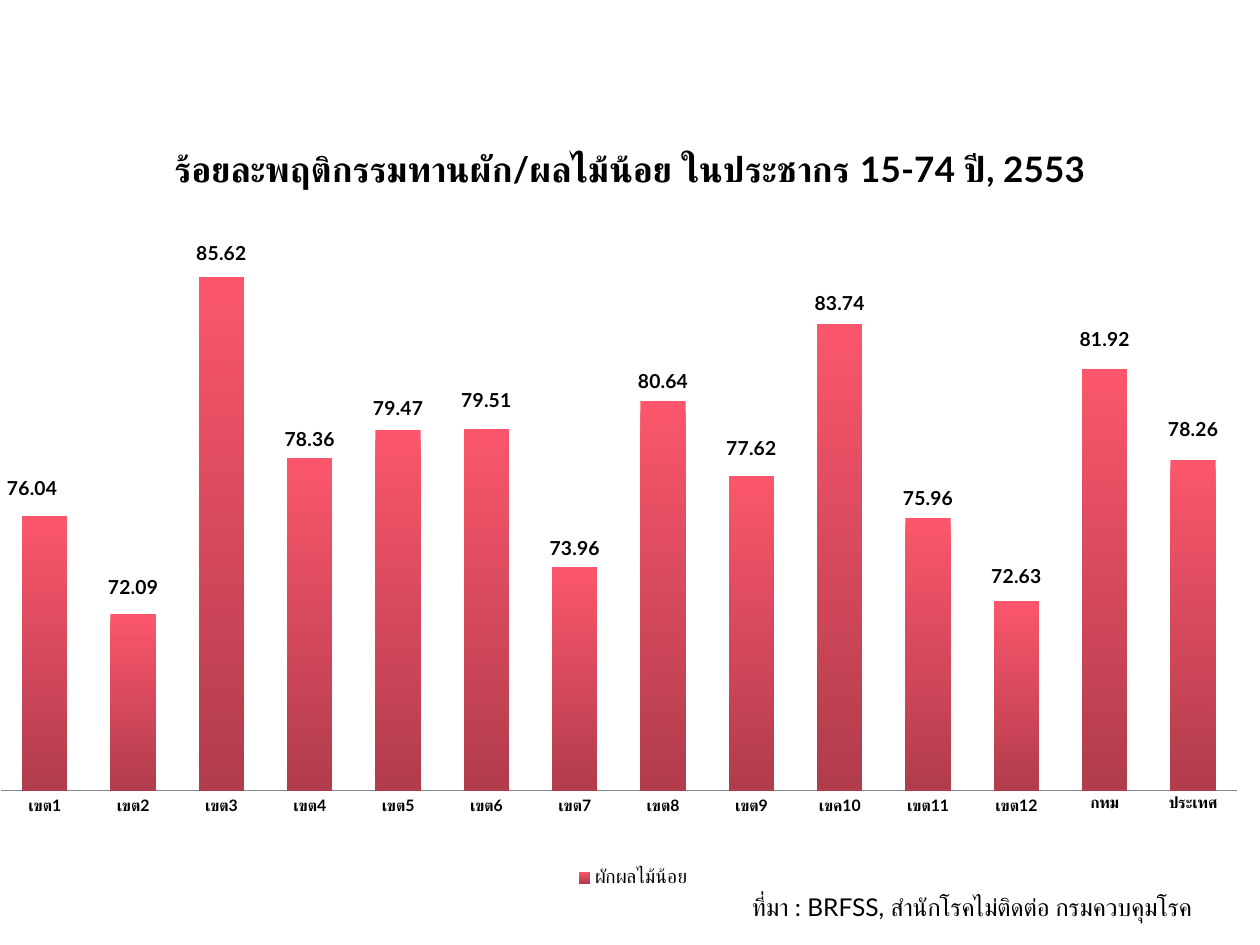
import pptx
import pptx.chart.data
import pptx.dml.color
import pptx.enum.chart
import pptx.enum.text
import pptx.oxml
import pptx.oxml.ns
import pptx.util

Inches = pptx.util.Inches
COLORS = {"ink": "000000", "top": "FB566C", "base": "B13C4C", "axis": "868686"}
FONT = "Lato"
ZONES = ["เขต1", "เขต2", "เขต3", "เขต4", "เขต5", "เขต6", "เขต7", "เขต8", "เขต9",
         "เขค10", "เขต11", "เขต12", "กทม", "ประเทศ"]
RATES = [76.04, 72.09, 85.62, 78.36, 79.47, 79.51, 73.96, 80.64, 77.62,
         83.74, 75.96, 72.63, 81.92, 78.26]
GAPS = [3.5, 3.5, 3.1, 2.4, 2.8, 3.7, 2.5, 2.6, 3.6, 2.7, 2.5, 3.1, 3.8, 4]
LOW, HIGH = 65, 90
PLOT = {"x": 0, "y": 0.062, "w": 0.982, "h": 0.781}
EXT = "http://schemas.microsoft.com/office/drawing/2012/chart"


def tint(name):
    """Return the named colour."""
    return pptx.dml.color.RGBColor.from_string(COLORS[name])


def style(font, size, bold=False):
    """Format a font in the slide's typeface."""
    font.name = FONT
    font.size = pptx.util.Pt(size)
    font.bold = bold
    font.color.rgb = tint("ink")


def lay(node, index, sizes, inner=False, edge=True):
    """Give a chart part a manual layout in fractions of the chart."""
    tag = pptx.oxml.ns.qn("c:layout")
    for old in node.findall(tag):
        node.remove(old)
    parts = '<c:layoutTarget val="inner"/>' if inner else ""
    if edge:
        parts += '<c:xMode val="edge"/><c:yMode val="edge"/>'
    parts += "".join(f'<c:{key} val="{val:.4f}"/>' for key, val in sizes.items())
    node.insert(index, pptx.oxml.parse_xml(
        f'<c:layout {pptx.oxml.ns.nsdecls("c")}><c:manualLayout>{parts}'
        '</c:manualLayout></c:layout>'))


def unlead(node):
    """Turn off the leader lines of a set of labels."""
    for old in node.findall(pptx.oxml.ns.qn("c:showLeaderLines")):
        node.remove(old)
    names = pptx.oxml.ns.nsdecls("c")
    node.append(pptx.oxml.parse_xml(f'<c:showLeaderLines {names} val="0"/>'))
    node.append(pptx.oxml.parse_xml(
        f'<c:extLst {names}><c:ext uri="{{CE6537A1-D6FC-4f65-9D91-7224C49458BB}}" '
        f'xmlns:c15="{EXT}"><c15:showLeaderLines val="0"/></c:ext></c:extLst>'))


def head(chart):
    """Write the chart title."""
    frame = chart.chart_title.text_frame
    frame.text = "ร้อยละพฤติกรรมทานผัก/ผลไม้น้อย ในประชากร 15-74 ปี, 2553"
    style(frame.paragraphs[0].runs[0].font, 20, True)
    lay(chart.chart_title._element, 1, {"x": 0.133, "y": 0.022})


def axes(chart):
    """Format both axes."""
    cat, val = chart.category_axis, chart.value_axis
    none = pptx.enum.chart.XL_TICK_MARK.NONE
    cat.major_tick_mark = cat.minor_tick_mark = none
    cat.format.line.color.rgb = tint("axis")
    style(cat.tick_labels.font, 9, True)
    val.minimum_scale, val.maximum_scale = LOW, HIGH
    val.has_major_gridlines = False
    val.visible = False


def bars(chart):
    """Fill the bars and set each label above its bar."""
    plot = chart.plots[0]
    plot.gap_width, plot.overlap = 95, 100
    plot.vary_by_categories = False
    series = plot.series[0]
    fill = series.format.fill
    fill.gradient()
    fill.gradient_angle = 270
    for stop, name in zip(fill.gradient_stops, ("top", "base")):
        stop.color.rgb = tint(name)
    labels = series.data_labels
    labels.show_value = True
    labels.number_format = "0.00"
    labels.number_format_is_linked = False
    style(labels.font, 11, True)
    for i in range(len(RATES)):
        style(series.points[i].data_label.font, 11, True)
    nodes = labels._element.findall(pptx.oxml.ns.qn("c:dLbl"))
    for i, (node, rate, gap) in enumerate(zip(nodes, RATES, GAPS)):
        half = (rate - LOW) / (HIGH - LOW) * PLOT["h"] / 2
        left = 0 if i else -0.01
        lay(node, 1, {"x": left, "y": -half - gap / 100}, edge=False)
    unlead(labels._element)


def key(chart):
    """Place the legend under the bars."""
    chart.has_legend = True
    legend = chart.legend
    legend.position = pptx.enum.chart.XL_LEGEND_POSITION.TOP
    legend.include_in_layout = False
    style(legend.font, 11)
    lay(legend._element, 1, {"x": 0.447, "y": 0.932, "w": 0.11, "h": 0.04})


def graph(slide, box):
    """Draw the column chart in the box."""
    data = pptx.chart.data.CategoryChartData(number_format="0.00")
    data.categories = ZONES
    data.add_series("ผักผลไม้น้อย", RATES)
    kind = pptx.enum.chart.XL_CHART_TYPE.COLUMN_STACKED
    chart = slide.shapes.add_chart(kind, *map(Inches, box), data).chart
    chart.font.name = "Cabin"
    chart.font.size = pptx.util.Pt(10)
    head(chart)
    axes(chart)
    bars(chart)
    key(chart)
    area = chart._chartSpace.chart.plotArea
    lay(area, 0, PLOT, inner=True)


def source(slide, box):
    """Write the source line in the box."""
    frame = slide.shapes.add_textbox(*map(Inches, box)).text_frame
    frame.word_wrap = False
    frame.auto_size = pptx.enum.text.MSO_AUTO_SIZE.SHAPE_TO_FIT_TEXT
    frame.text = "ที่มา : BRFSS, สำนักโรคไม่ติดต่อ กรมควบคุมโรค"
    style(frame.paragraphs[0].runs[0].font, 14)


def main():
    """Build and save the slide."""
    deck = pptx.Presentation()
    deck.slide_width, deck.slide_height = Inches(10), Inches(7.5)
    slide = deck.slides.add_slide(deck.slide_layouts[6])
    graph(slide, (0, 0.94, 10, 6.33))
    source(slide, (5.87, 7.03, 4.13, 0.34))
    deck.save("out.pptx")


if __name__ == "__main__":
    main()
